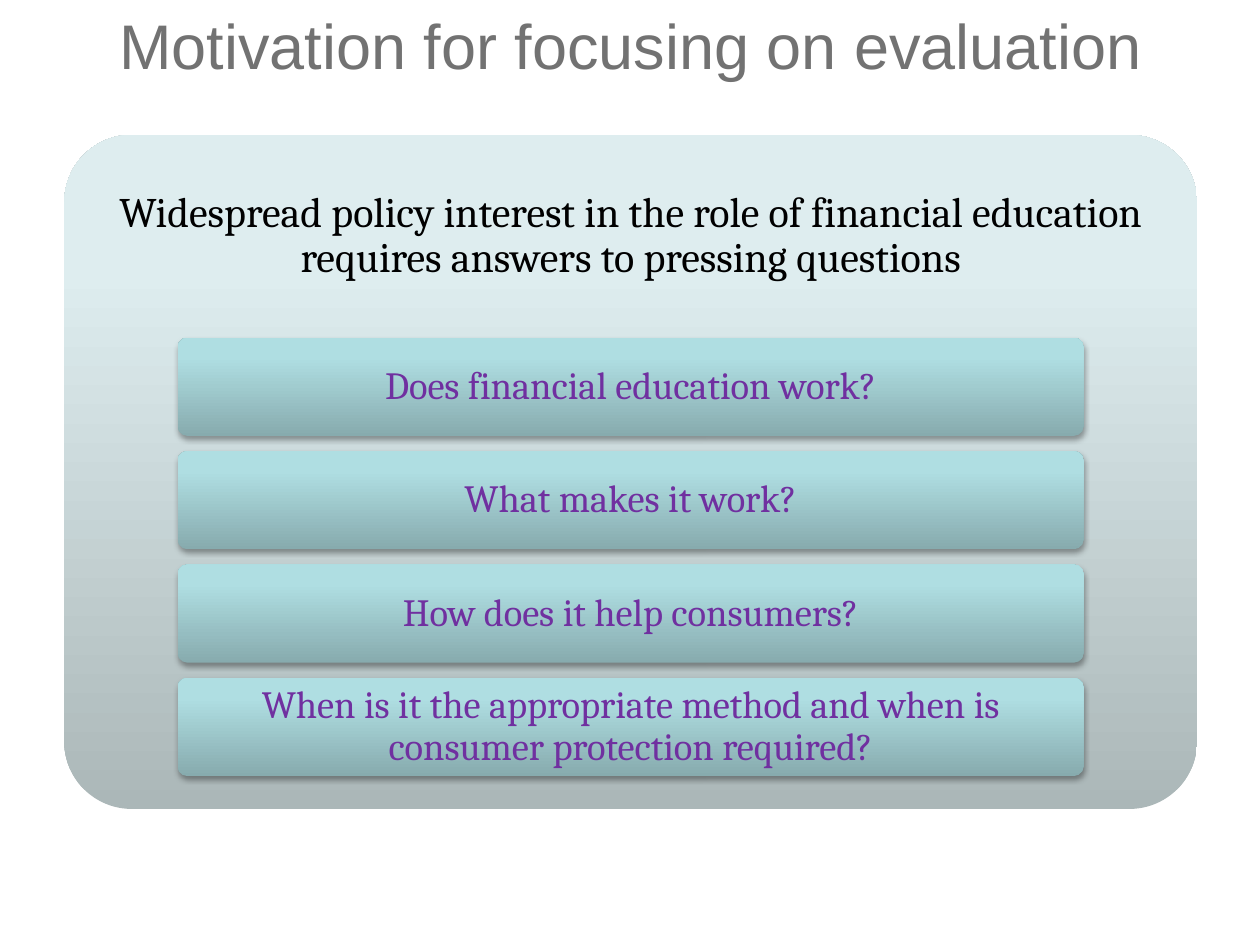
from lxml import etree
from pptx import Presentation
from pptx import util as u
from pptx.dml.color import RGBColor
from pptx.enum import shapes, text
from pptx.oxml.ns import qn

TITLE = "Motivation for focusing on evaluation"
HEADING = ("Widespread policy interest in the role of financial education "
           "requires answers to pressing questions")
QUESTIONS = [
    "Does financial education work?",
    "What makes it work?",
    "How does it help consumers?",
    "When is it the appropriate method and when is consumer protection required?",
]
PANEL_STOPS = [(0, "ABB7B8"), (80, "DEEDEF"), (100, "DFEFF0")]
QUESTION_STOPS = [(0, "87ABAE"), (80, "AFDEE2"), (100, "AFE0E4")]

LEFT, WIDTH = 0.51, 8.99
PANEL_TOP, PANEL_HEIGHT, HEADING_HEIGHT = 1.07, 5.35, 1.61
QUESTION_WIDTH, QUESTION_HEIGHT, QUESTION_PITCH = 7.19, 0.78, 0.9


def child(parent, tag, **attributes):
    return etree.SubElement(parent, qn(tag), {k: str(v) for k, v in attributes.items()})


def box(left, top, width, height):
    return [u.Inches(value) for value in (left, top, width, height)]


def write(shape, wording, size, font_name, color, margins=(0.1, 0.05), spacing=None):
    frame = shape.text_frame
    frame.word_wrap = True
    frame.vertical_anchor = text.MSO_ANCHOR.MIDDLE
    frame.margin_left = frame.margin_right = u.Inches(margins[0])
    frame.margin_top = frame.margin_bottom = u.Inches(margins[1])
    frame.text = wording
    paragraph = frame.paragraphs[0]
    paragraph.alignment = text.PP_ALIGN.CENTER
    paragraph.line_spacing = spacing
    paragraph.font.size = u.Pt(size)
    paragraph.font.name = font_name
    paragraph.font.color.rgb = RGBColor.from_string(color)


def add_panel(slide, place, stops, shadow=False):
    shape = slide.shapes.add_shape(shapes.MSO_SHAPE.ROUNDED_RECTANGLE, *place)
    shape.adjustments[0] = 0.1
    properties = shape._element.spPr
    gradient = child(properties, "a:gradFill", rotWithShape=1)
    stop_list = child(gradient, "a:gsLst")
    for position, color in stops:
        stop = child(stop_list, "a:gs", pos=position * 1000)
        child(stop, "a:srgbClr", val=color)
    child(gradient, "a:lin", ang=270 * 60000, scaled=0)
    shape.line.fill.background()
    shape.shadow.inherit = False
    if shadow:
        effects = properties.find(qn("a:effectLst"))
        outer = child(effects, "a:outerShdw", blurRad=u.Pt(3.1), dist=u.Pt(1.8),
                      dir=90 * 60000, rotWithShape=0)
        child(child(outer, "a:srgbClr", val="000000"), "a:alpha", val=35000)
    return shape


def main():
    presentation = Presentation()
    presentation.slide_width, presentation.slide_height = u.Inches(10), u.Inches(7.5)
    slide = presentation.slides.add_slide(presentation.slide_layouts[5])

    title = slide.shapes.title
    title.left, title.top, title.width, title.height = box(LEFT, 0, WIDTH, 0.71)
    write(title, TITLE, 36, "Arial", "727272")

    add_panel(slide, box(LEFT, PANEL_TOP, WIDTH, PANEL_HEIGHT), PANEL_STOPS)
    heading = slide.shapes.add_textbox(*box(LEFT, PANEL_TOP, WIDTH, HEADING_HEIGHT))
    write(heading, HEADING, 24, "Cambria", "000000", (0.1, 0.1), 0.9)

    question_left = LEFT + (WIDTH - QUESTION_WIDTH) / 2
    for index, question in enumerate(QUESTIONS):
        top = PANEL_TOP + HEADING_HEIGHT + index * QUESTION_PITCH
        place = box(question_left, top, QUESTION_WIDTH, QUESTION_HEIGHT)
        shape = add_panel(slide, place, QUESTION_STOPS, shadow=True)
        write(shape, question, 22, "Cambria", "7030A0", (0.06, 0.05), 0.9)

    presentation.save("out.pptx")


if __name__ == "__main__":
    main()
